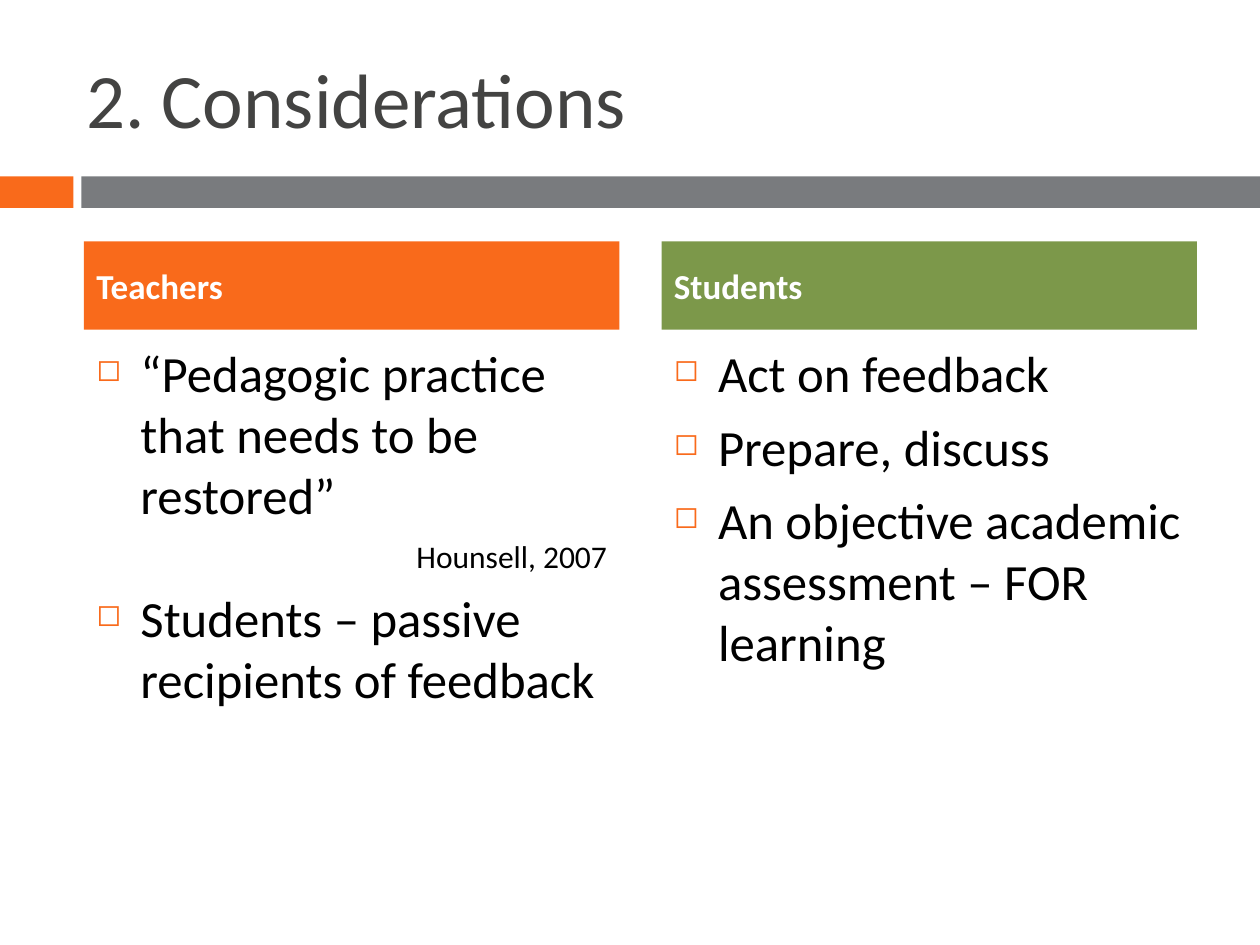
from dataclasses import dataclass

from lxml import etree
from pptx import Presentation
from pptx.dml.color import RGBColor
from pptx.enum import shapes, text
from pptx.oxml.ns import qn
from pptx.util import Pt

TITLE = "2. Considerations"
QUOTE_SOURCE = "Hounsell, 2007"
COLUMNS = [
    ("Teachers", "orange", [
        "“Pedagogic practice that needs to be restored”",
        QUOTE_SOURCE,
        "Students – passive recipients of feedback",
    ]),
    ("Students", "green", [
        "Act on feedback",
        "Prepare, discuss",
        "An objective academic assessment – FOR learning",
    ]),
]


@dataclass(frozen=True)
class Theme:
    font: str = "Calibri"
    orange: str = "F96A1B"
    green: str = "7C984A"
    grey: str = "797B7E"
    heading: str = "434342"
    body: str = "000000"
    white: str = "FFFFFF"
    title_size: float = 44
    header_size: float = 20
    body_size: float = 29
    source_size: float = 18


THEME = Theme()
SLIDE_WIDTH, SLIDE_HEIGHT = 720, 540
TITLE_BOX = (42, 21.6, 642, 68.4)
BAND_TOP, BAND_HEIGHT = 100.8, 18
BAND_PARTS = [(0, 42, "orange"), (46.5, SLIDE_WIDTH - 46.5, "grey")]
COLUMN_LEFT, COLUMN_WIDTH, COLUMN_GAP = 48, 306, 24
HEADER_TOP, HEADER_HEIGHT = 138, 50.4
BODY_TOP, BODY_HEIGHT = 192, 282
INDENT = 25.2
SPACE_BEFORE = 7


def set_attributes(target, values):
    for name, value in values.items():
        setattr(target, name, value)


def write(paragraph, words, size, color, bold=False, align=text.PP_ALIGN.LEFT):
    paragraph.alignment = align
    run = paragraph.add_run()
    run.text = words
    set_attributes(run.font, {"name": THEME.font, "size": Pt(size), "bold": bold})
    run.font.color.rgb = RGBColor.from_string(color)


def add_bullet(paragraph):
    """Give the paragraph a hanging indent and a small orange square."""
    properties = paragraph._p.get_or_add_pPr()
    properties.set("marL", str(Pt(INDENT)))
    properties.set("indent", str(-Pt(INDENT)))
    color = etree.SubElement(properties, qn("a:buClr"))
    etree.SubElement(color, qn("a:srgbClr"), val=THEME.orange)
    etree.SubElement(properties, qn("a:buSzPct"), val="60000")
    etree.SubElement(properties, qn("a:buChar"), char="◻")


def add_rectangle(slide, box, fill):
    shape = slide.shapes.add_shape(shapes.MSO_SHAPE.RECTANGLE, *map(Pt, box))
    shape.shadow.inherit = False
    shape.fill.solid()
    shape.fill.fore_color.rgb = RGBColor.from_string(fill)
    shape.line.fill.background()
    return shape


def add_title(slide):
    title = slide.shapes.title
    set_attributes(title, dict(zip(("left", "top", "width", "height"), map(Pt, TITLE_BOX))))
    frame = title.text_frame
    set_attributes(frame, {"word_wrap": True, "auto_size": text.MSO_AUTO_SIZE.NONE,
                           "vertical_anchor": text.MSO_ANCHOR.MIDDLE})
    write(frame.paragraphs[0], TITLE, THEME.title_size, THEME.heading)


def add_header(slide, left, words, fill):
    header = add_rectangle(slide, (left, HEADER_TOP, COLUMN_WIDTH, HEADER_HEIGHT), fill)
    frame = header.text_frame
    set_attributes(frame, {"word_wrap": True, "vertical_anchor": text.MSO_ANCHOR.MIDDLE})
    write(frame.paragraphs[0], words, THEME.header_size, THEME.white, bold=True)


def add_points(slide, left, points):
    box = slide.shapes.add_textbox(*map(Pt, (left, BODY_TOP, COLUMN_WIDTH, BODY_HEIGHT)))
    frame = box.text_frame
    frame.word_wrap = True
    for index, point in enumerate(points):
        paragraph = frame.add_paragraph() if index else frame.paragraphs[0]
        paragraph.space_before = Pt(SPACE_BEFORE)
        if point == QUOTE_SOURCE:
            write(paragraph, point, THEME.source_size, THEME.body, align=text.PP_ALIGN.RIGHT)
        else:
            write(paragraph, point, THEME.body_size, THEME.body)
            add_bullet(paragraph)


def main():
    presentation = Presentation()
    set_attributes(presentation, {"slide_width": Pt(SLIDE_WIDTH), "slide_height": Pt(SLIDE_HEIGHT)})
    slide = presentation.slides.add_slide(presentation.slide_layouts.get_by_name("Title Only"))
    for left, width, color in BAND_PARTS:
        add_rectangle(slide, (left, BAND_TOP, width, BAND_HEIGHT), getattr(THEME, color))
    add_title(slide)
    for index, (header, color, points) in enumerate(COLUMNS):
        left = COLUMN_LEFT + index * (COLUMN_WIDTH + COLUMN_GAP)
        add_points(slide, left, points)
        add_header(slide, left, header, getattr(THEME, color))
    presentation.save("out.pptx")


if __name__ == "__main__":
    main()
